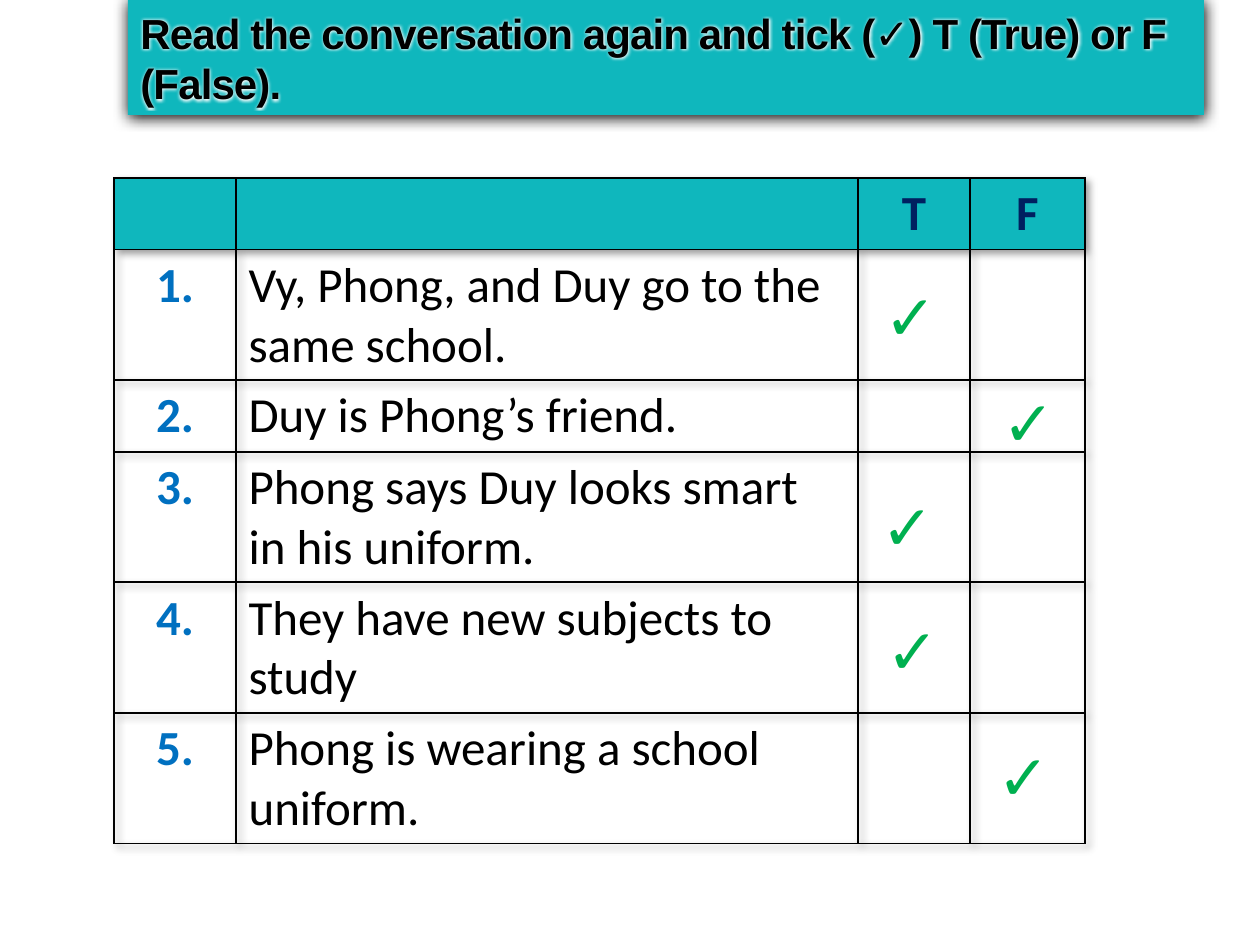
from lxml import etree
from pptx import Presentation
from pptx.dml.color import RGBColor
from pptx.enum.shapes import MSO_SHAPE
from pptx.enum.text import MSO_ANCHOR, MSO_AUTO_SIZE, PP_ALIGN
from pptx.oxml.ns import qn
from pptx.util import Pt

RECTANGLE = MSO_SHAPE.RECTANGLE
LEFT, CENTER = PP_ALIGN.LEFT, PP_ALIGN.CENTER
MIDDLE = MSO_ANCHOR.MIDDLE
FIT_SHAPE = MSO_AUTO_SIZE.SHAPE_TO_FIT_TEXT

PX = 914400 / 126
BLACK = RGBColor(0x00, 0x00, 0x00)
WHITE = RGBColor(0xFF, 0xFF, 0xFF)
TEAL = RGBColor(0x0F, 0xB7, 0xBD)
NAVY = RGBColor(0x00, 0x20, 0x60)
BLUE = RGBColor(0x00, 0x70, 0xC0)
GREEN = RGBColor(0x00, 0xB0, 0x50)

INSTRUCTION = "Read the conversation again and tick (✓) T (True) or F (False)."
STATEMENTS = [
    "Vy, Phong, and Duy go to the same school.",
    "Duy is Phong’s friend.",
    "Phong says Duy looks smart in his uniform.",
    "They have new subjects to study",
    "Phong is wearing a school uniform.",
]
COLUMN_WIDTHS = [122, 622, 112, 115]
ROW_HEIGHTS = [71, 130, 72, 130, 131, 130]
TICK_POSITIONS = [(872, 271), (990, 377), (869, 481), (874, 605), (985, 731)]


def px(length):
    return round(length * PX)


def box(left, top, width, height):
    return px(left), px(top), px(width), px(height)


def write(text_frame, text, size, color, font="Calibri", bold=False, align=LEFT):
    text_frame.text = text
    paragraph = text_frame.paragraphs[0]
    paragraph.alignment = align
    run = paragraph.runs[0]
    run.font.name = font
    run.font.size = Pt(size)
    run.font.bold = bold
    run.font.color.rgb = color
    return run


def add_color(parent, color, opacity=100):
    element = etree.SubElement(parent, qn("a:srgbClr"), val=str(color))
    if opacity < 100:
        etree.SubElement(element, qn("a:alpha"), val=str(opacity * 1000))


def make_shadow(blur, distance, angle, opacity=100):
    effects = etree.Element(qn("a:effectLst"))
    shadow = etree.SubElement(
        effects, qn("a:outerShdw"), blurRad=str(Pt(blur)), dist=str(Pt(distance)),
        dir=str(angle * 60000), algn="t", rotWithShape="0")
    add_color(shadow, BLACK, opacity)
    return effects


def add_glow(run, radius, color):
    effects = etree.Element(qn("a:effectLst"))
    glow = etree.SubElement(effects, qn("a:glow"), rad=str(Pt(radius)))
    add_color(glow, color)
    run.font._element.find(qn("a:solidFill")).addnext(effects)


def add_banner(slide):
    shape = slide.shapes.add_shape(RECTANGLE, *box(128, 0, 1076, 115))
    shape.fill.solid()
    shape.fill.fore_color.rgb = TEAL
    shape.line.fill.background()
    shape.shadow.inherit = False
    properties = shape._element.spPr
    properties.replace(properties.find(qn("a:effectLst")), make_shadow(8.5, 1, 90))

    text_frame = shape.text_frame
    text_frame.word_wrap = True
    text_frame.auto_size = FIT_SHAPE
    text_frame.vertical_anchor = MIDDLE
    run = write(text_frame, INSTRUCTION, 24, BLACK, "Arial", bold=True)
    run.font._element.set("spc", "-50")
    add_glow(run, 4, WHITE)


def add_borders(cell):
    properties = cell._tc.get_or_add_tcPr()
    for index, side in enumerate(("lnL", "lnR", "lnT", "lnB")):
        line = etree.Element(qn(f"a:{side}"), w=str(Pt(1)))
        add_color(etree.SubElement(line, qn("a:solidFill")), BLACK)
        properties.insert(index, line)


def add_statement_table(slide):
    frame = slide.shapes.add_table(
        len(ROW_HEIGHTS), len(COLUMN_WIDTHS),
        *box(114, 178, sum(COLUMN_WIDTHS), sum(ROW_HEIGHTS)))
    table = frame.table
    table.first_row = table.horz_banding = False
    table._tbl.tblPr.insert(0, make_shadow(4, 3, 45, 40))
    for column, width in zip(table.columns, COLUMN_WIDTHS):
        column.width = px(width)
    for row, height in zip(table.rows, ROW_HEIGHTS):
        row.height = px(height)

    # Fills and borders
    for row_index, row in enumerate(table.rows):
        for cell in row.cells:
            if row_index == 0:
                cell.fill.solid()
                cell.fill.fore_color.rgb = TEAL
            else:
                cell.fill.background()
            add_borders(cell)

    # Headings and numbered statements
    for column_index, heading in ((2, "T"), (3, "F")):
        write(table.cell(0, column_index).text_frame, heading, 28, NAVY,
              bold=True, align=CENTER)
    for number, statement in enumerate(STATEMENTS, start=1):
        write(table.cell(number, 0).text_frame, f"{number}.", 28, BLUE,
              bold=True, align=CENTER)
        write(table.cell(number, 1).text_frame, statement, 28, BLACK)


def add_tick(slide, left, top):
    text_frame = slide.shapes.add_textbox(*box(left, top, 76, 89)).text_frame
    text_frame.word_wrap = False
    text_frame.auto_size = FIT_SHAPE
    write(text_frame, "✓", 36, GREEN)


def main():
    presentation = Presentation()
    presentation.slide_width = px(1260)
    presentation.slide_height = px(945)
    slide = presentation.slides.add_slide(presentation.slide_layouts[6])

    add_banner(slide)
    add_statement_table(slide)
    for left, top in TICK_POSITIONS:
        add_tick(slide, left, top)

    presentation.save("out.pptx")


if __name__ == "__main__":
    main()
